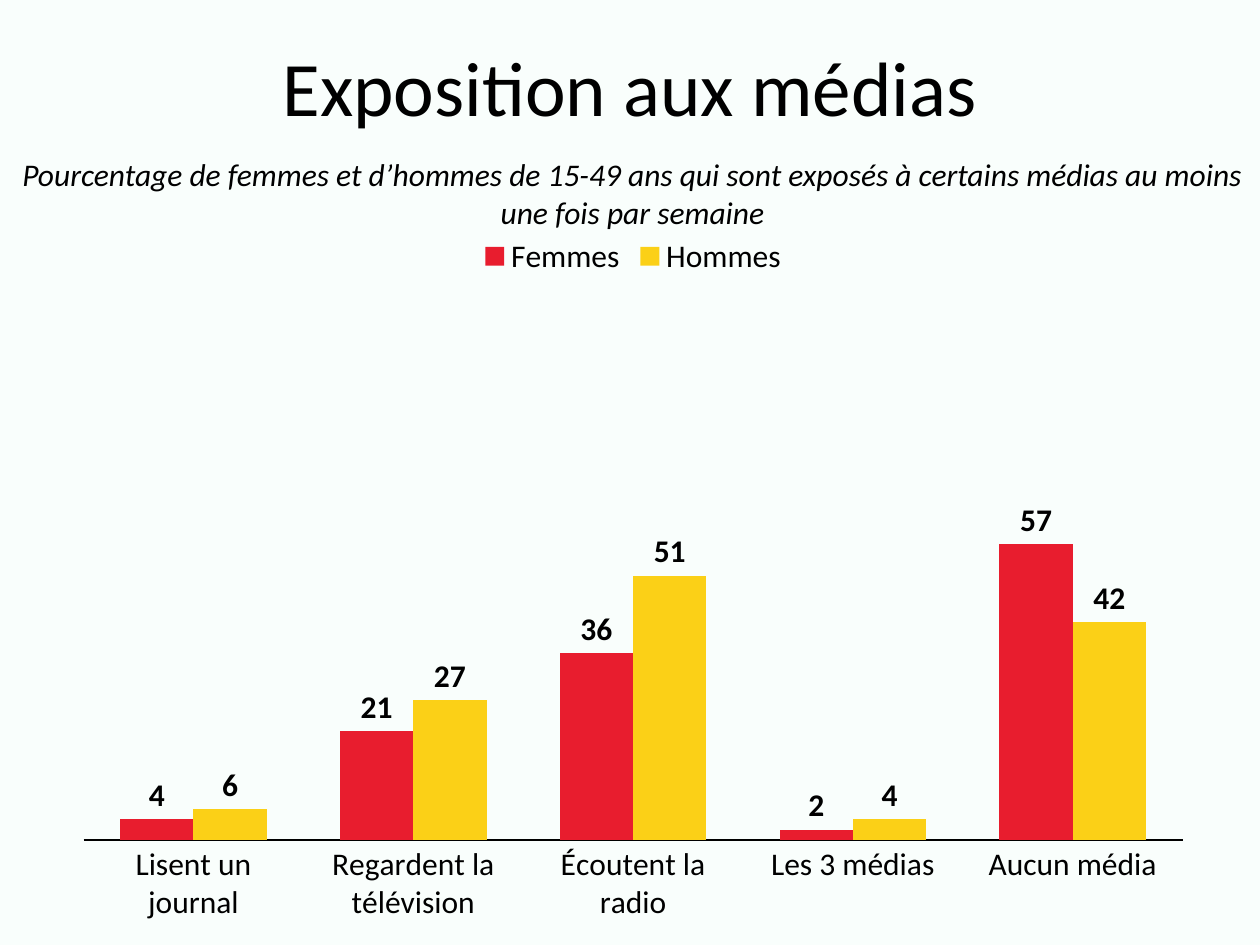
import pptx
import pptx.chart.data
import pptx.dml.color
import pptx.enum.chart
import pptx.enum.text
import pptx.oxml
import pptx.oxml.ns
import pptx.util

FONT = "Calibri"
COLORS = {"background": "F9FEFC", "text": "000000",
          "Femmes": "E81D2E", "Hommes": "FBD017"}
CATEGORIES = ["Lisent un journal", "Regardent la télévision",
              "Écoutent la radio", "Les 3 médias", "Aucun média"]
SERIES = {"Femmes": [4, 21, 36, 2, 57], "Hommes": [6, 27, 51, 4, 42]}
PLOT_AREA = {"x": 0.017, "y": 0.138, "w": 0.966, "h": 0.717}


def rgb(name):
    return pptx.dml.color.RGBColor.from_string(COLORS[name])


def style_font(font, size, bold=False, italic=False):
    font.name = FONT
    font.size = pptx.util.Pt(size)
    font.bold = bold
    font.italic = italic
    font.color.rgb = rgb("text")


def place(s, left, top, width, height):
    s.left, s.top, s.width, s.height = map(
        pptx.util.Inches, (left, top, width, height))


def write_centered(s, text, size, italic=False):
    tf = s.text_frame
    tf.word_wrap = True
    tf.text = text
    p = tf.paragraphs[0]
    p.alignment = pptx.enum.text.PP_ALIGN.CENTER
    style_font(p.runs[0].font, size, italic=italic)
    return tf


def add_title(slide, text):
    s = slide.shapes.title
    place(s, 0, 0, 10, 1.45)
    tf = write_centered(s, text, 44)
    tf.vertical_anchor = pptx.enum.text.MSO_ANCHOR.MIDDLE
    tf.paragraphs[0].line_spacing = 0.9


def add_subtitle(slide, text):
    s = slide.shapes.add_textbox(0, 0, 0, 0)
    place(s, 0.02, 1.18, 10, 0.71)
    write_centered(s, text, 18, italic=True)


def fix_plot_area(chart):
    """Pin the inner plot area to shares of the chart's size."""
    plot_area = chart._chartSpace.chart.plotArea
    for old in plot_area.findall(pptx.oxml.ns.qn("c:layout")):
        plot_area.remove(old)
    modes = '<c:xMode val="edge"/><c:yMode val="edge"/>'
    sizes = "".join(f'<c:{k} val="{v}"/>' for k, v in PLOT_AREA.items())
    plot_area.insert(0, pptx.oxml.parse_xml(
        f'<c:layout {pptx.oxml.ns.nsdecls("c")}><c:manualLayout>'
        f'<c:layoutTarget val="inner"/>{modes}{sizes}'
        '</c:manualLayout></c:layout>'))


def style_axes(chart):
    axis = chart.category_axis
    axis.major_tick_mark = pptx.enum.chart.XL_TICK_MARK.NONE
    axis.format.line.color.rgb = rgb("text")
    axis.format.line.width = pptx.util.Pt(0.75)
    style_font(axis.tick_labels.font, 18)
    values = chart.value_axis
    values.minimum_scale, values.maximum_scale = 0, 100
    values.has_major_gridlines = False
    values.visible = False


def style_series(series):
    series.format.fill.solid()
    series.format.fill.fore_color.rgb = rgb(series.name)
    series.invert_if_negative = False
    labels = series.data_labels
    labels.show_value = True
    labels.position = pptx.enum.chart.XL_LABEL_POSITION.OUTSIDE_END
    style_font(labels.font, 18, bold=True)


def add_media_chart(slide):
    data = pptx.chart.data.CategoryChartData()
    data.categories = CATEGORIES
    for name, values in SERIES.items():
        data.add_series(name, values)
    frame = slide.shapes.add_chart(
        pptx.enum.chart.XL_CHART_TYPE.COLUMN_CLUSTERED, 0, 0, 0, 0, data)
    place(frame, 0.51, 1.76, 9.03, 5.74)
    chart = frame.chart
    chart.has_title = False
    style_font(chart.font, 10)
    chart.has_legend = True
    chart.legend.position = pptx.enum.chart.XL_LEGEND_POSITION.TOP
    chart.legend.include_in_layout = False
    style_font(chart.legend.font, 18)
    style_axes(chart)
    plot = chart.plots[0]
    plot.gap_width = 100
    plot.overlap = 0
    plot.vary_by_categories = False
    for series in plot.series:
        style_series(series)
    fix_plot_area(chart)


def main():
    prs = pptx.Presentation()
    prs.slide_width = pptx.util.Inches(10)
    prs.slide_height = pptx.util.Inches(7.5)
    title_only = prs.slide_layouts[5]
    slide = prs.slides.add_slide(title_only)
    slide.background.fill.solid()
    slide.background.fill.fore_color.rgb = rgb("background")
    add_title(slide, "Exposition aux médias")
    add_media_chart(slide)
    add_subtitle(slide, "Pourcentage de femmes et d’hommes de 15-49 ans qui "
                        "sont exposés à certains médias au moins une fois "
                        "par semaine")
    prs.save("out.pptx")


if __name__ == "__main__":
    main()
